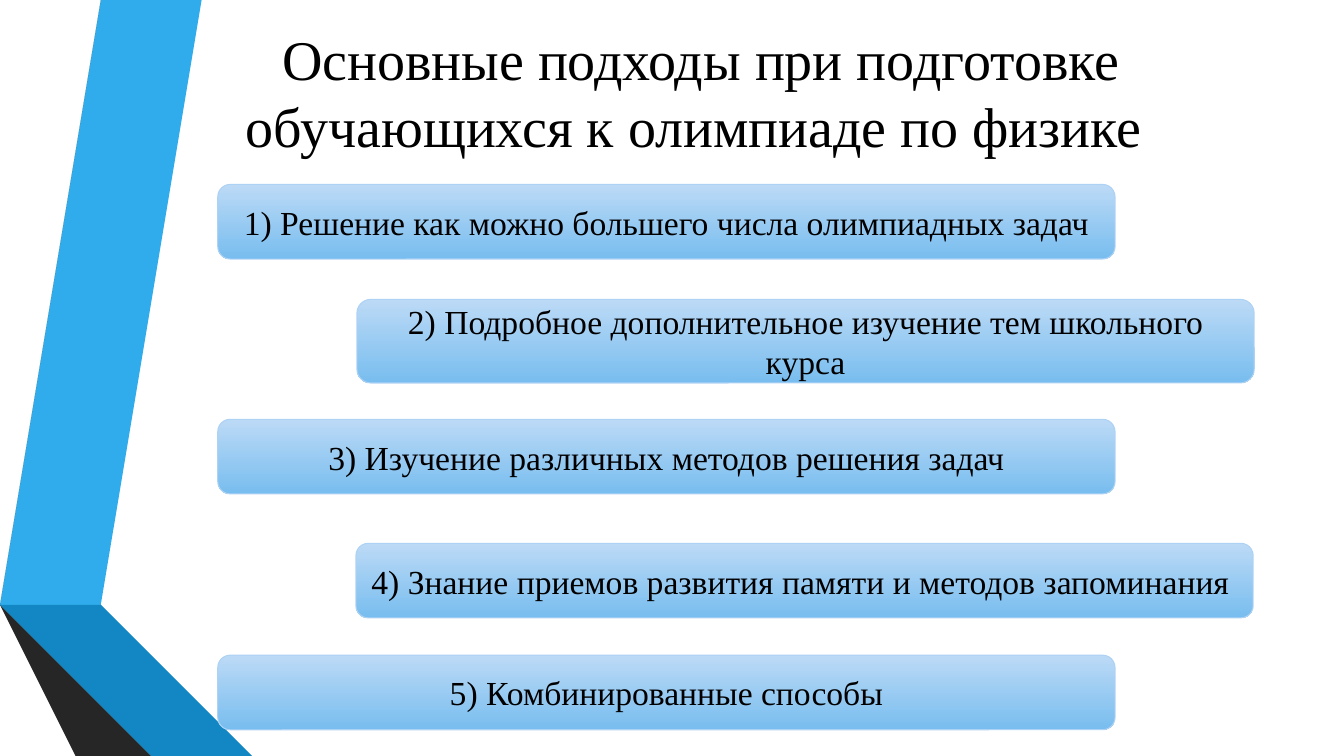
import pptx
import pptx.util
import pptx.dml.color
import pptx.enum.shapes
import pptx.enum.text

Inches = pptx.util.Inches
Pt = pptx.util.Pt

HUES = {
    "sky": "30ACEC", "gray": "595959", "black": "262626", "navy": "0C5A82",
    "blue": "1287C3", "dark": "404040", "text": "000000",
    "top": "BCDAF6", "base": "78BDEF", "edge": "AED2F4",
}
BANDS = [
    ("sky", [(0.5, 5.78), (0.77, 5.83), (1.73, 0), (1.45, 0)]),
    ("gray", [(1.39, 0), (1.11, 0), (0.16, 5.73), (0.44, 5.77)]),
    ("black", [(0.16, 5.73), (1.45, 7.5), (1.51, 7.5)]),
    ("navy", [(0.5, 5.79), (2.08, 7.5), (2.14, 7.5)]),
    ("blue", [(0.5, 5.79), (2.14, 7.5), (2.83, 7.5), (0.77, 5.83), (0.5, 5.78)]),
    ("dark", [(2.02, 7.5), (0.48, 5.83), (0.43, 5.78), (0.44, 5.77),
              (0.16, 5.73), (1.51, 7.5)]),
]
TITLE = "Основные подходы при подготовке обучающихся к олимпиаде по физике "
STEPS = [
    ("1) Решение как можно большего числа олимпиадных задач", 2.16, 1.83, 0.74),
    ("2) Подробное дополнительное изучение тем школьного курса", 3.54, 2.97, 0.83),
    ("3) Изучение различных методов решения задач", 2.16, 4.16, 0.74),
    ("4) Знание приемов развития памяти и методов запоминания ", 3.53, 5.39, 0.74),
    ("5) Комбинированные способы", 2.16, 6.5, 0.74),
]
WIDE = 8.9
FRAME = {"word_wrap": True, "vertical_anchor": pptx.enum.text.MSO_ANCHOR.MIDDLE}
FONT = {"name": "Times New Roman"}


def hue(key):
    return pptx.dml.color.RGBColor.from_string(HUES[key])


def apply(item, form):
    for key, value in form.items():
        setattr(item, key, value)


def write(shape, text, size):
    frame = shape.text_frame
    apply(frame, FRAME)
    para = frame.paragraphs[0]
    para.alignment = pptx.enum.text.PP_ALIGN.CENTER
    run = para.add_run()
    run.text = text
    apply(run.font, FONT | {"size": Pt(size)})
    run.font.color.rgb = hue("text")


def band(shapes, key, points):
    build = shapes.build_freeform(*points[0], scale=Inches(1))
    build.add_line_segments(points[1:], close=True)
    shape = build.convert_to_shape()
    shape.shadow.inherit = False
    shape.fill.solid()
    shape.fill.fore_color.rgb = hue(key)
    shape.line.fill.background()


def step(shapes, text, left, top, high):
    kind = pptx.enum.shapes.MSO_SHAPE.ROUNDED_RECTANGLE
    shape = shapes.add_shape(kind, *map(Inches, (left, top, WIDE, high)))
    shape.shadow.inherit = False
    shape.fill.gradient()
    shape.fill.gradient_angle = 270
    for stop, key, place in zip(shape.fill.gradient_stops, ("top", "base"), (0, 1)):
        stop.color.rgb = hue(key)
        stop.position = place
    shape.line.color.rgb = hue("edge")
    shape.line.width = Pt(0.75)
    write(shape, text, 24)


def main():
    deck = pptx.Presentation()
    apply(deck, {"slide_width": Inches(13.33), "slide_height": Inches(7.5)})
    shapes = deck.slides.add_slide(deck.slide_layouts[6]).shapes
    for key, points in BANDS:
        band(shapes, key, points)
    title = shapes.add_textbox(*map(Inches, (1.47, -0.05, 10.96, 1.92)))
    write(title, TITLE, 40)
    for row in STEPS:
        step(shapes, *row)
    deck.save("out.pptx")


if __name__ == "__main__":
    main()
